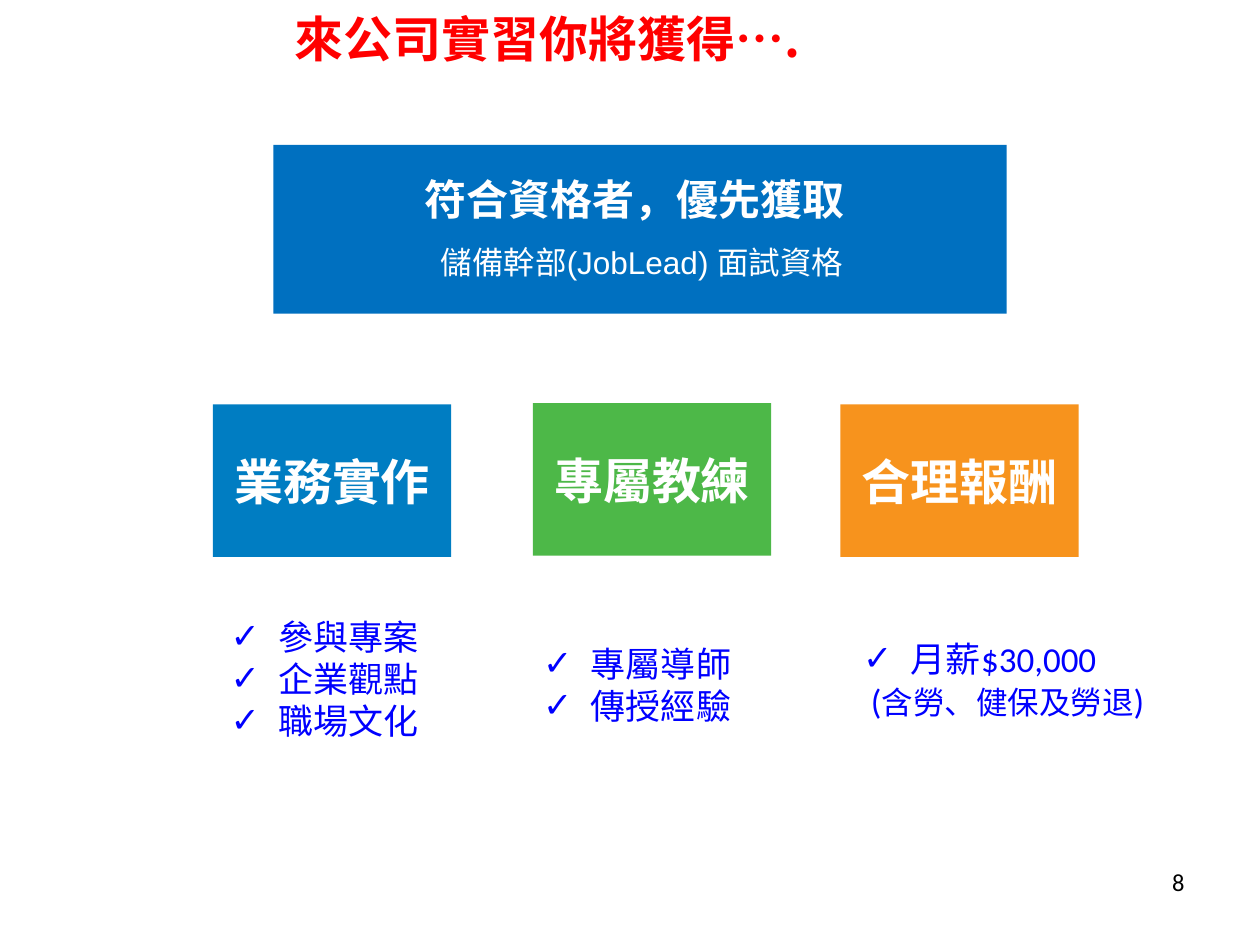
"""Build the internship benefits slide."""
from dataclasses import dataclass

from lxml import etree
from pptx import Presentation
from pptx import util as u
from pptx.dml.color import RGBColor
from pptx.enum import shapes, text
from pptx.oxml import ns

COLORS = {"red": "FF0000", "black": "000000", "white": "FFFFFF", "ink": "0000FF",
          "banner": "0070C0", "blue": "007DC2", "green": "4DB848", "orange": "F7931D"}
CJK_FONT = "Noto Sans CJK SC"
HANG = u.Inches(0.38)
CARD_WIDTH, CARD_HEIGHT = 1.89, 1.21


@dataclass
class Line:
    spans: list[tuple[str, int]]
    bullet: bool = True


@dataclass
class Benefit:
    heading: str
    color: str
    left: float
    top: float
    holder: int
    area: tuple[float, float, float, float]
    lines: list[Line]


def points(*items: str) -> list[Line]:
    return [Line([(item, 20)]) for item in items]


BENEFITS = [
    Benefit("業務實作", "blue", 1.69, 3.21, 1, (1.73, 4.78, 1.7, 1.21),
            points("參與專案", "企業觀點", "職場文化")),
    Benefit("專屬教練", "green", 4.23, 3.2, 2, (4.21, 4.83, 1.89, 1.21),
            points("專屬導師", "傳授經驗")),
    Benefit("合理報酬", "orange", 6.67, 3.21, 3, (6.75, 5.05, 2.58, 0.69),
            points("月薪$30,000")
            + [Line([(" (", 20), ("含勞、健保及勞退", 18), (")", 20)], bullet=False)]),
]


def place(box, left: float, top: float, width: float, height: float) -> None:
    box.left, box.top = u.Inches(left), u.Inches(top)
    box.width, box.height = u.Inches(width), u.Inches(height)


def prepare(box, anchor=text.MSO_ANCHOR.MIDDLE):
    frame = box.text_frame
    frame.word_wrap = True
    frame.auto_size = text.MSO_AUTO_SIZE.NONE
    frame.vertical_anchor = anchor
    return frame


def write(para, words: str, *, size: int, color: str, font: str = "Calibri",
          bold: bool = False, align=text.PP_ALIGN.LEFT) -> None:
    para.alignment = align
    span = para.add_run()
    span.text = words
    span.font.size = u.Pt(size)
    span.font.bold = bold
    span.font.color.rgb = RGBColor.from_string(COLORS[color])
    span.font.name = font
    east = etree.SubElement(span.font._element, ns.qn("a:ea"))
    east.set("typeface", CJK_FONT)


def set_bullet(para, bullet: bool) -> None:
    para.space_before = u.Pt(0)
    props = para._p.get_or_add_pPr()
    props.set("marL", str(HANG if bullet else 0))
    props.set("indent", str(-HANG if bullet else 0))
    mark = etree.SubElement(props, ns.qn("a:buChar" if bullet else "a:buNone"))
    if bullet:
        mark.set("char", "✓")


def add_label(page, area: tuple[float, float, float, float], words: str,
              anchor=text.MSO_ANCHOR.TOP, **style) -> None:
    box = page.shapes.add_textbox(*map(u.Inches, area))
    write(prepare(box, anchor).paragraphs[0], words, **style)


def add_block(page, area: tuple[float, float, float, float], color: str):
    block = page.shapes.add_shape(shapes.MSO_SHAPE.RECTANGLE, *map(u.Inches, area))
    block.shadow.inherit = False
    block.fill.solid()
    block.fill.fore_color.rgb = RGBColor.from_string(COLORS[color])
    block.line.fill.background()
    return block


def add_benefit(page, benefit: Benefit) -> None:
    card = add_block(page, (benefit.left, benefit.top, CARD_WIDTH, CARD_HEIGHT), benefit.color)
    write(prepare(card).paragraphs[0], benefit.heading, size=28, color="white",
          bold=True, align=text.PP_ALIGN.CENTER)
    box = page.placeholders[benefit.holder]
    place(box, *benefit.area)
    frame = prepare(box)
    for index, line in enumerate(benefit.lines):
        para = frame.add_paragraph() if index else frame.paragraphs[0]
        set_bullet(para, line.bullet)
        for words, size in line.spans:
            write(para, words, size=size, color="ink")


def main() -> None:
    deck = Presentation()
    deck.slide_width, deck.slide_height = u.Inches(10), u.Inches(7.5)
    page = deck.slides.add_slide(deck.slide_layouts.get_by_name("Comparison"))
    spare = page.placeholders[4]._element
    spare.getparent().remove(spare)

    title = page.shapes.title
    place(title, 2.24, 0, 7.48, 0.6)
    write(prepare(title).paragraphs[0], "來公司實習你將獲得….", size=28, color="red",
          font=CJK_FONT, bold=True)

    add_block(page, (2.17, 1.15, 5.82, 1.34), "banner")
    add_label(page, (3.27, 1.28, 3.7, 0.6), "符合資格者，優先獲取",
              anchor=text.MSO_ANCHOR.MIDDLE, size=24, color="white", bold=True)
    add_label(page, (3.4, 1.88, 4.07, 0.4), "儲備幹部(JobLead) 面試資格",
              size=18, color="white", font="Arial")
    for benefit in BENEFITS:
        add_benefit(page, benefit)
    add_label(page, (7.17, 6.83, 2.33, 0.52), "8", size=14, color="black",
              align=text.PP_ALIGN.RIGHT)
    deck.save("out.pptx")


if __name__ == "__main__":
    main()
